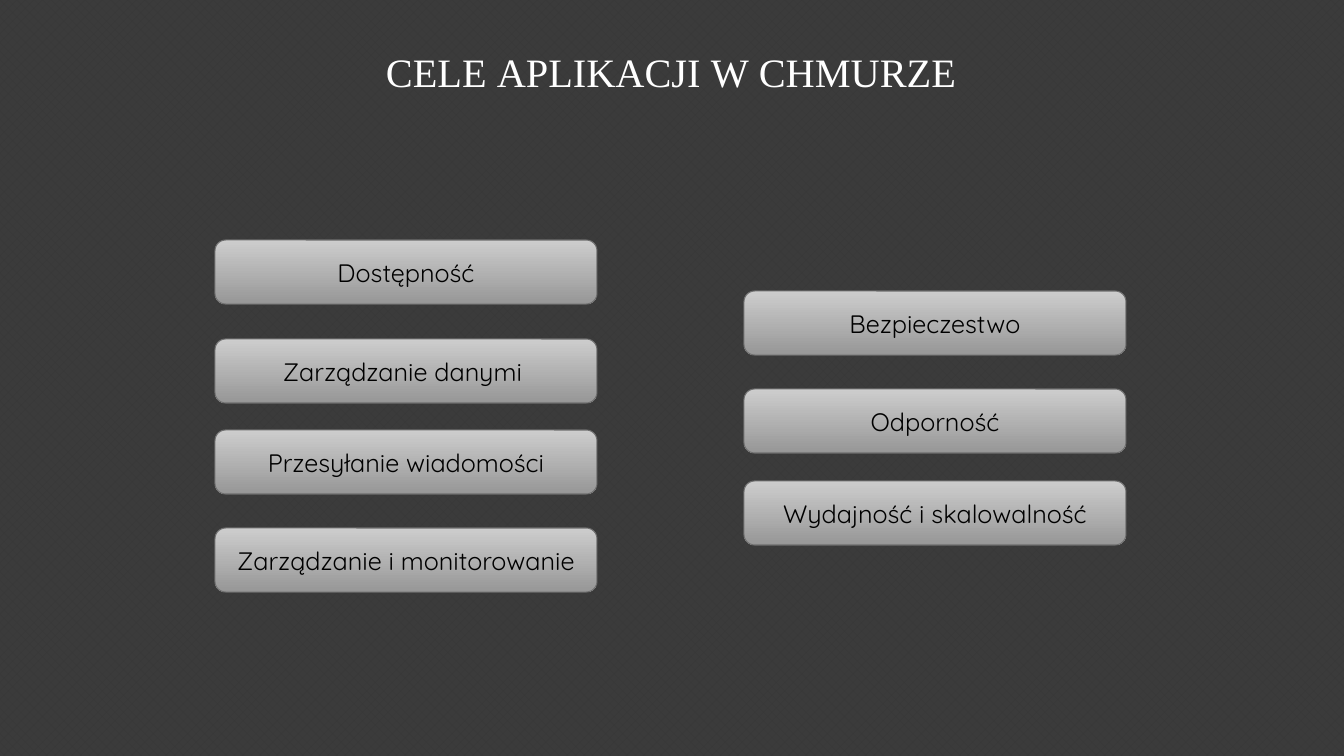
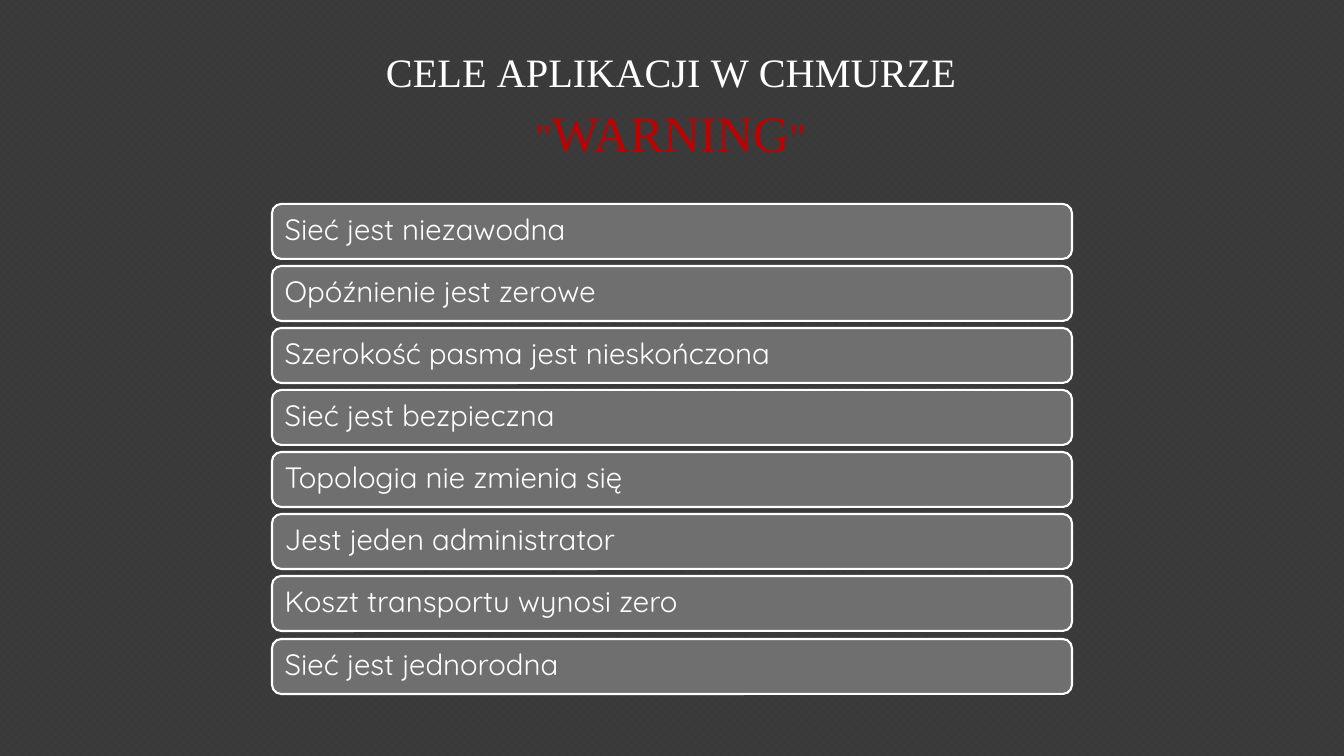
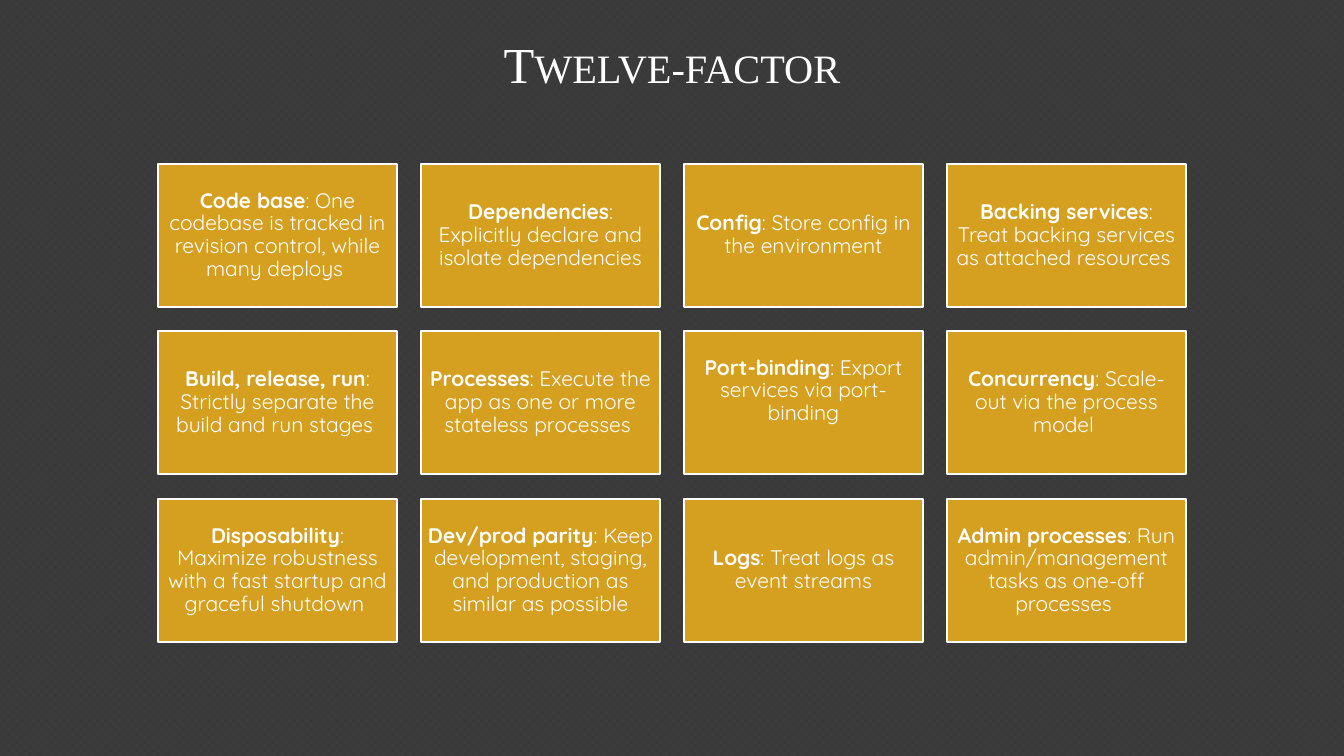
from pptx import Presentation, oxml
from pptx import util as u
from pptx.dml.color import RGBColor
from pptx.enum import dml, shapes, text
from pptx.oxml import ns

# Shared style
SCALE = 12192000 / 1344
WHITE = RGBColor(0xFF, 0xFF, 0xFF)
BLACK = RGBColor(0x00, 0x00, 0x00)
RED = RGBColor(0xC0, 0x00, 0x00)
GOLD = RGBColor(0xD5, 0x9F, 0x20)
GREY = RGBColor(0x6F, 0x6F, 0x6F)
LIGHT = RGBColor(0xCD, 0xCD, 0xCD)
MID = RGBColor(0x97, 0x97, 0x97)
DARK = RGBColor(0x38, 0x38, 0x38)
BACK = RGBColor(0x3B, 0x3B, 0x3B)
SERIF, SANS = "Times New Roman", "Quicksand"
ROUND = shapes.MSO_SHAPE.ROUNDED_RECTANGLE
RECT = shapes.MSO_SHAPE.RECTANGLE
MIDDLE = text.PP_ALIGN.CENTER
LEFT = text.PP_ALIGN.LEFT

GLOW = (f'<a:effectLst {ns.nsdecls("a")}><a:outerShdw blurRad="50800" dist="25400" dir="5400000">'
        '<a:srgbClr val="000000"><a:alpha val="40000"/></a:srgbClr></a:outerShdw></a:effectLst>')
BEFORE = f'<a:spcBef {ns.nsdecls("a")}><a:spcPct val="20000"/></a:spcBef>'


def px(n):
    return u.Emu(round(n * SCALE))


class Deck:
    def __init__(self):
        self.prs = Presentation()
        self.prs.slide_width, self.prs.slide_height = px(1344), px(756)
        fill = self.prs.slide_master.background.fill
        fill.patterned()
        fill.pattern = dml.MSO_PATTERN.from_xml("pct40")
        fill.fore_color.rgb, fill.back_color.rgb = DARK, BACK
        self.slide = None

    def head(self, shape, words, color):
        """Format a heading in shadowed small capitals."""
        frame = shape.text_frame
        frame.text = words
        frame.word_wrap = True
        frame.auto_size = text.MSO_AUTO_SIZE.NONE
        frame.vertical_anchor = text.MSO_ANCHOR.TOP
        par = frame.paragraphs[0]
        par.alignment = MIDDLE
        par._p.get_or_add_pPr().append(oxml.parse_xml(BEFORE))
        run = par.runs[0]
        run.font.color.rgb = color
        props = run._r.get_or_add_rPr()
        props.append(oxml.parse_xml(GLOW))
        props.set("cap", "small")
        run.font.name, run.font.size = SERIF, u.Pt(36)

    def title(self, words, x, y, w, h):
        """Start a slide with its title."""
        self.slide = self.prs.slides.add_slide(self.prs.slide_layouts[5])
        shape = self.slide.shapes.title
        shape.left, shape.top, shape.width, shape.height = map(px, (x, y, w, h))
        self.head(shape, words, WHITE)

    def note(self, words, x, y, w, h, color):
        """Add a heading below the title."""
        self.head(self.slide.shapes.add_textbox(*map(px, (x, y, w, h))), words, color)

    def box(self, kind, x, y, w, h, fill, line, width):
        """Add a box; a pair of colours makes a vertical gradient."""
        shape = self.slide.shapes.add_shape(kind, *map(px, (x, y, w, h)))
        shape.shadow.inherit = False
        if isinstance(fill, tuple) and not isinstance(fill, RGBColor):
            shape.fill.gradient()
            shape.fill.gradient_angle = 270
            for stop, color in zip(shape.fill.gradient_stops, fill):
                stop.color.rgb = color
        else:
            shape.fill.solid()
            shape.fill.fore_color.rgb = fill
        shape.line.color.rgb, shape.line.width = line, u.Pt(width)
        return shape

    def label(self, shape, words, size, color, align=MIDDLE, lead="", inset=10, low=5, space=1.0):
        """Write in a box; a lead comes first in bold."""
        frame = shape.text_frame
        frame.word_wrap = True
        frame.vertical_anchor = text.MSO_ANCHOR.MIDDLE
        frame.margin_left = frame.margin_right = px(inset)
        frame.margin_top, frame.margin_bottom = px(5), px(low)
        par = frame.paragraphs[0]
        par.alignment, par.line_spacing = align, space
        for part, bold in ((lead, True), (words, False)):
            if part:
                run = par.add_run()
                run.text = part
                run.font.name, run.font.size = SANS, u.Pt(size)
                run.font.bold, run.font.color.rgb = bold, color


GOALS = [
    (215, 240, "Dostępność"),
    (215, 339, "Zarządzanie danymi "),
    (215, 430, "Przesyłanie wiadomości"),
    (215, 528, "Zarządzanie i monitorowanie"),
    (744, 291, "Bezpieczestwo"),
    (744, 389, "Odporność"),
    (744, 481, "Wydajność i skalowalność"),
]
MYTHS = [
    "Sieć jest niezawodna ",
    "Opóźnienie jest zerowe",
    "Szerokość pasma jest nieskończona",
    "Sieć jest bezpieczna ",
    "Topologia nie zmienia się ",
    "Jest jeden administrator ",
    "Koszt transportu wynosi zero",
    "Sieć jest jednorodna",
]
FACTORS = [
    ("Code base", ": One codebase is tracked in revision control, while many deploys "),
    ("Dependencies", ": Explicitly declare and isolate dependencies"),
    ("Config", ": Store config in the environment"),
    ("Backing services", ": Treat backing services as attached resources "),
    ("Build, release, run", ": Strictly separate the build and run stages "),
    ("Processes", ": Execute the app as one or more stateless processes "),
    ("Port-binding", ": Export services via port-binding"),
    ("Concurrency", ": Scale-out via the process model "),
    ("Disposability", ": Maximize robustness with a fast startup and graceful shutdown "),
    ("Dev/prod parity", ": Keep development, staging, and production as similar as possible"),
    ("Logs", ": Treat logs as event streams"),
    ("Admin processes", ": Run admin/management tasks as one-off processes "),
]


def main():
    deck = Deck()

    # Goals in two columns
    deck.title("cele aplikacji w chmurze", 266, 32, 810, 64)
    for x, y, goal in GOALS:
        shape = deck.box(ROUND, x, y, 382, 64, (LIGHT, MID), GREY, 0.75)
        deck.label(shape, goal, 18, BLACK)

    # Stack of false beliefs
    deck.title("cele aplikacji w chmurze", 266, 32, 810, 64)
    deck.note('"WARNING"', 266, 97, 810, 64, RED)
    for i, myth in enumerate(MYTHS):
        shape = deck.box(ROUND, 272, 204 + 435 * i // 7, 800, 55, GREY, WHITE, 1.5)
        deck.label(shape, myth, 21, WHITE, LEFT, space=0.9)

    # Grid of twelve factors
    deck.title("Twelve-factor", 190, 28, 964, 84)
    for i, (lead, words) in enumerate(FACTORS):
        row, col = divmod(i, 4)
        shape = deck.box(RECT, 158 + 263 * col, 164 + 335 * row // 2, 239, 143, GOLD, WHITE, 1.5)
        low = 28 if lead == "Port-binding" else 5
        deck.label(shape, words, 15, WHITE, lead=lead, inset=6, low=low, space=0.9)

    deck.prs.save("out.pptx")


if __name__ == "__main__":
    main()
